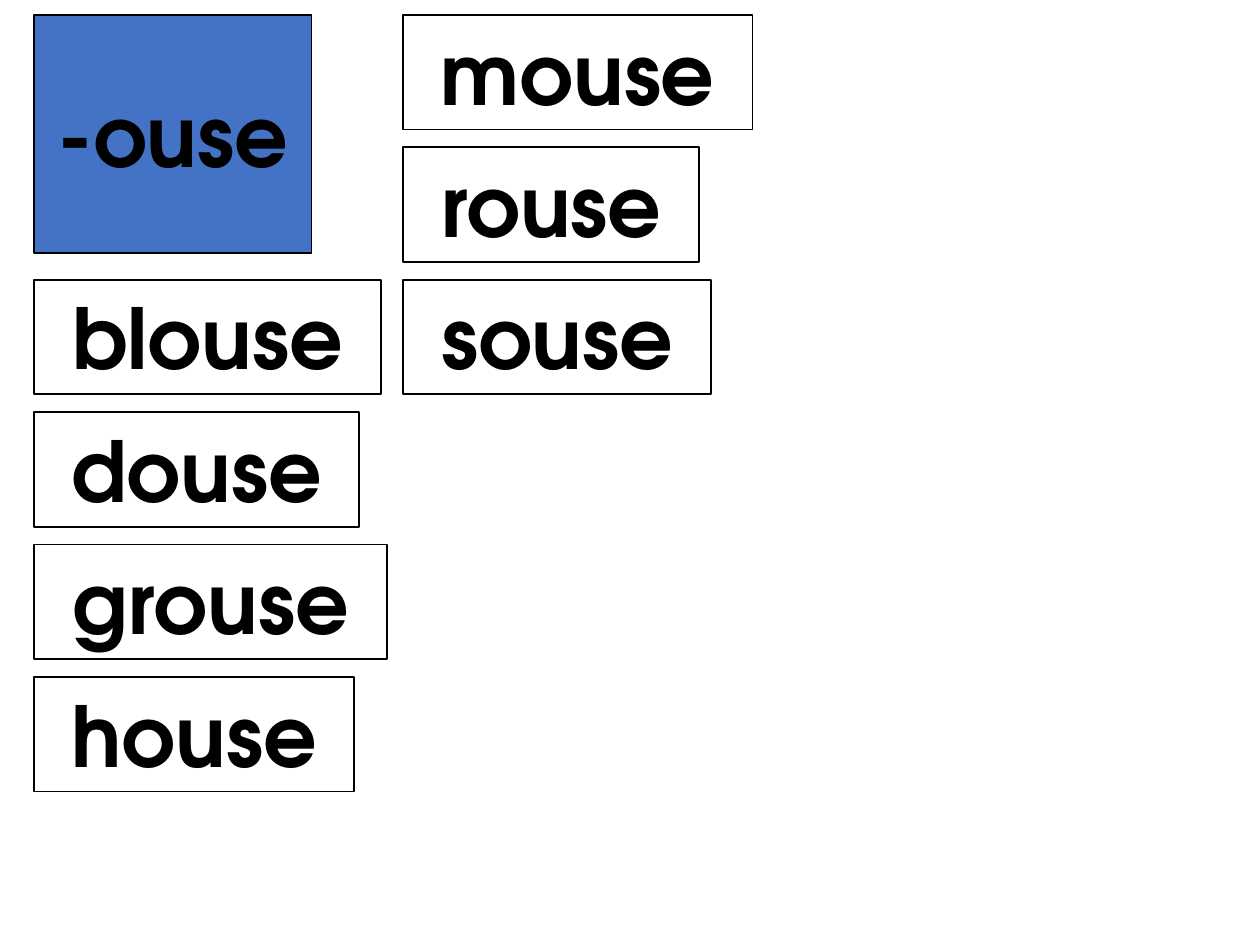
from pptx import Presentation
from pptx.dml.color import RGBColor
from pptx.enum.shapes import MSO_SHAPE
from pptx.enum.text import MSO_ANCHOR, MSO_AUTO_SIZE, PP_ALIGN
from pptx.util import Cm, Pt

BLACK = RGBColor(0x00, 0x00, 0x00)
WHITE = RGBColor(0xFF, 0xFF, 0xFF)
BLUE = RGBColor(0x44, 0x72, 0xC4)
FONT = "TeX Gyre Adventor"

TOP = 0.3
ROW_STEP = 2.67
CARD_HEIGHT = 2.31
LEFT_COLUMN = 0.69
RIGHT_COLUMN = 8.13

# Column left edge, first row, and each word with its card width (cm)
COLUMNS = [
    (RIGHT_COLUMN, 0, [("mouse", 7.04), ("rouse", 5.97), ("souse", 6.2)]),
    (LEFT_COLUMN, 2, [("blouse", 6.99), ("douse", 6.55),
                      ("grouse", 7.11), ("house", 6.45)]),
]


def add_box(s, text, left, top, width, height, fill):
    sp = s.shapes.add_shape(MSO_SHAPE.RECTANGLE, Cm(left), Cm(top),
                            Cm(width), Cm(height))
    sp.shadow.inherit = False
    sp.fill.solid()
    sp.fill.fore_color.rgb = fill
    sp.line.color.rgb = BLACK
    sp.line.width = Pt(1)
    tf = sp.text_frame
    tf.text = text
    p = tf.paragraphs[0]
    p.alignment = PP_ALIGN.CENTER
    font = p.runs[0].font
    font.name = FONT
    font.size = Pt(48)
    font.bold = True
    font.color.rgb = BLACK
    return sp


def add_word_card(s, word, left, row, width):
    """Add a white card that fits its word, padded by a space on each side."""
    sp = add_box(s, f" {word} ", left, TOP + row * ROW_STEP,
                 width, CARD_HEIGHT, WHITE)
    tf = sp.text_frame
    tf.word_wrap = False
    tf.auto_size = MSO_AUTO_SIZE.SHAPE_TO_FIT_TEXT
    tf.vertical_anchor = MSO_ANCHOR.TOP


def add_ending_tile(s, ending):
    sp = add_box(s, ending, LEFT_COLUMN, TOP, 5.59, 4.8, BLUE)
    sp.text_frame.word_wrap = True
    sp.text_frame.vertical_anchor = MSO_ANCHOR.MIDDLE


def main():
    prs = Presentation()
    prs.slide_width = Cm(25.4)
    prs.slide_height = Cm(19.05)
    s = prs.slides.add_slide(prs.slide_layouts[6])
    for left, first_row, words in COLUMNS:
        for row, (word, width) in enumerate(words, first_row):
            add_word_card(s, word, left, row, width)
    add_ending_tile(s, "-ouse")
    prs.save("out.pptx")


if __name__ == "__main__":
    main()
